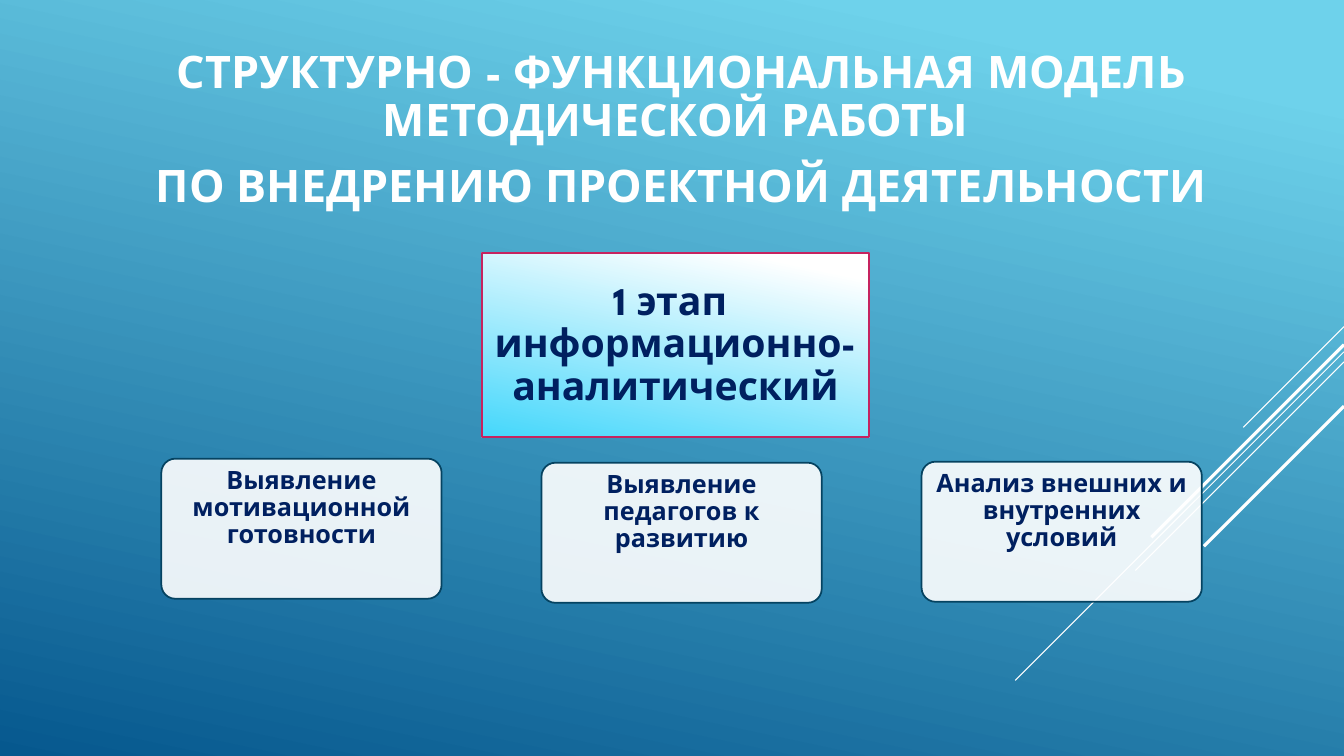
from dataclasses import dataclass

from lxml.etree import SubElement
from pptx import Presentation
from pptx.dml.color import RGBColor
from pptx.enum.shapes import MSO_CONNECTOR, MSO_SHAPE
from pptx.enum.text import MSO_ANCHOR, MSO_AUTO_SIZE, PP_ALIGN
from pptx.oxml.ns import qn
from pptx.util import Inches, Pt


@dataclass(frozen=True)
class Theme:
    font: str = "League Spartan"
    white: str = "FFFFFF"
    navy: str = "002060"
    edge: str = "054361"
    rose: str = "C6235F"
    sky: tuple = ("6ED2EB", "06588E")
    glow: tuple = ("FFFFFF", "45D7FB")
    tilt: int = 258
    border: float = 1.25
    head: int = 32
    stage: int = 28
    card: int = 18


def write(frame, lines, size, color, font, anchor=MSO_ANCHOR.TOP, before=0, after=0, side=0.1):
    frame.word_wrap = True
    frame.auto_size = MSO_AUTO_SIZE.NONE
    frame.vertical_anchor = anchor
    frame.margin_left = frame.margin_right = Inches(side)
    frame.margin_top = frame.margin_bottom = Inches(0.05)
    for i, line in enumerate(lines):
        para = frame.paragraphs[0] if i == 0 else frame.add_paragraph()
        para.alignment = PP_ALIGN.CENTER
        para.line_spacing = 0.9
        para.space_before = Pt(before if i else 0)
        para.space_after = Pt(after)
        run = para.add_run()
        run.text = line
        run.font.name = font
        run.font.size = Pt(size)
        run.font.bold = True
        run.font.color.rgb = RGBColor.from_string(color)


class Deck:
    """Draws styled elements on the current slide."""

    def __init__(self, theme, width, height):
        self.theme = theme
        self.width = width
        self.file = Presentation()
        self.file.slide_width = Inches(width)
        self.file.slide_height = Inches(height)
        self.slide = self.file.slides.add_slide(self.file.slide_layouts[5])

    def blend(self, fill, colors):
        fill.gradient()
        fill.gradient_angle = self.theme.tilt
        for stop, color, place in zip(fill.gradient_stops, colors, (0.1, 1)):
            stop.color.rgb = RGBColor.from_string(color)
            stop.position = place

    def sky(self):
        self.blend(self.slide.background.fill, self.theme.sky)

    def ray(self, top, run, weight):
        line = self.slide.shapes.add_connector(
            MSO_CONNECTOR.STRAIGHT, Inches(self.width), Inches(top),
            Inches(self.width - run), Inches(top + run))
        line.line.color.rgb = RGBColor.from_string(self.theme.white)
        line.line.width = Pt(weight)
        SubElement(line._element.spPr, qn("a:effectLst"))

    def title(self, lines, left, top, width, height):
        box = self.slide.shapes.title
        box.left, box.top = Inches(left), Inches(top)
        box.width, box.height = Inches(width), Inches(height)
        write(box.text_frame, lines, self.theme.head, self.theme.white, self.theme.font,
              anchor=MSO_ANCHOR.MIDDLE, before=6.4, after=6)

    def block(self, kind, left, top, width, height, edge):
        shape = self.slide.shapes.add_shape(
            kind, Inches(left), Inches(top), Inches(width), Inches(height))
        shape.shadow.inherit = False
        shape.line.color.rgb = RGBColor.from_string(edge)
        shape.line.width = Pt(self.theme.border)
        return shape

    def stage(self, lines, left, top, width, height):
        shape = self.block(MSO_SHAPE.RECTANGLE, left, top, width, height, self.theme.rose)
        self.blend(shape.fill, self.theme.glow)
        write(shape.text_frame, lines, self.theme.stage, self.theme.navy, self.theme.font,
              anchor=MSO_ANCHOR.MIDDLE)

    def card(self, text, left, top, width, height):
        shape = self.block(MSO_SHAPE.ROUNDED_RECTANGLE, left, top, width, height, self.theme.edge)
        shape.adjustments[0] = 0.1
        shape.fill.solid()
        shape.fill.fore_color.rgb = RGBColor.from_string(self.theme.white)
        color = shape._element.spPr.find(qn("a:solidFill")).find(qn("a:srgbClr"))
        SubElement(color, qn("a:alpha")).set("val", "90000")
        write(shape.text_frame, [text], self.theme.card, self.theme.navy, self.theme.font,
              side=0.08)


def main():
    deck = Deck(Theme(), 13.33, 7.5)
    deck.sky()
    rays = [(3.24, 1, 0.75), (3.49, 3.26, 0.75), (3.59, 2.07, 0.75),
            (3.42, 1.91, 2.25), (4.03, 1.39, 2.25)]
    for ray in rays:
        deck.ray(*ray)
    deck.title(["СТРУКТУРНО - ФУНКЦИОНАЛЬНАЯ МОДЕЛЬ МЕТОДИЧЕСКОЙ РАБОТЫ ",
                "ПО ВНЕДРЕНИЮ ПРОЕКТНОЙ ДЕЯТЕЛЬНОСТИ"], 0.75, -0.06, 12.02, 2.72)
    deck.stage(["1 этап ", "информационно-аналитический"], 4.78, 2.51, 3.84, 1.83)
    cards = [("Выявление мотивационной готовности", 4.55),
             ("Выявление педагогов к развитию", 4.59),
             ("Анализ внешних и внутренних условий", 4.58)]
    for i, (text, top) in enumerate(cards):
        deck.card(text, 1.6 + 3.77 * i, top, 2.78, 1.39)
    deck.file.save("out.pptx")


if __name__ == "__main__":
    main()
